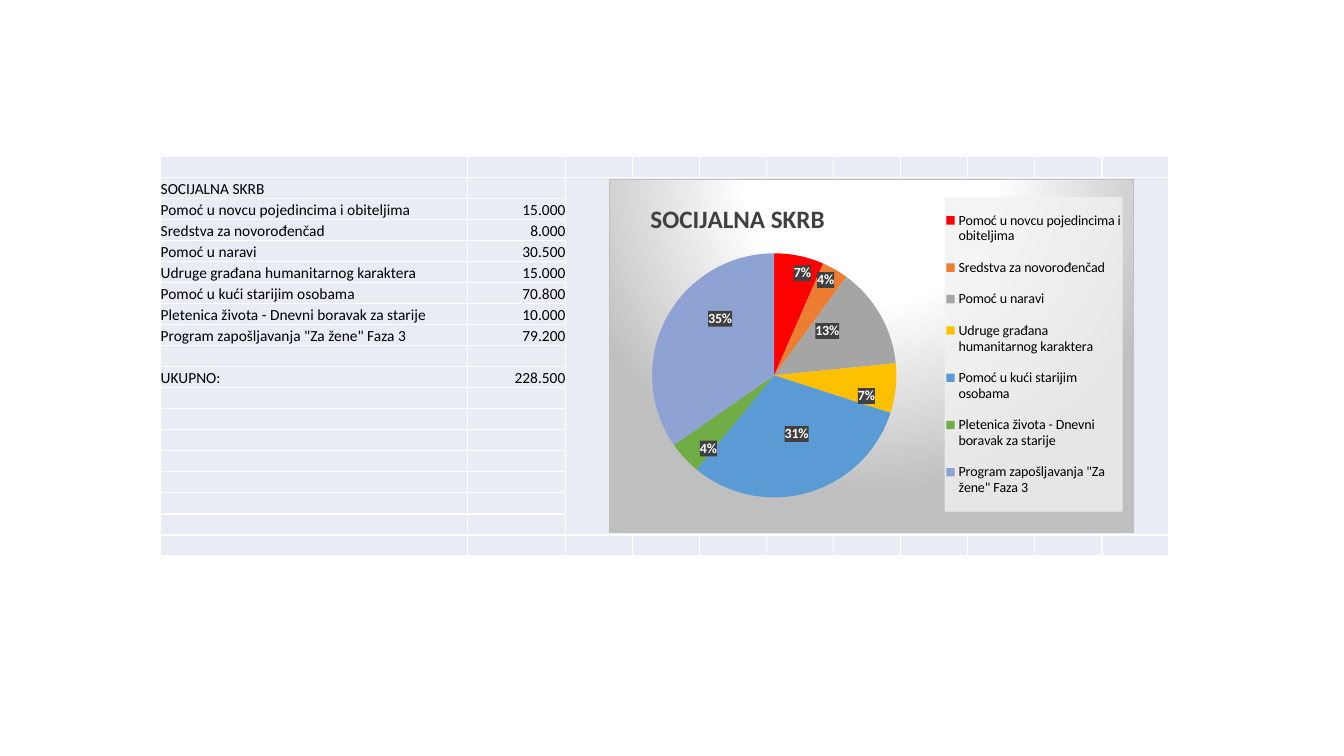
"""Build the social care budget slide with its table and pie chart."""
from copy import deepcopy

from lxml import etree
from pptx import Presentation
from pptx.chart.data import CategoryChartData
from pptx.dml.color import RGBColor
from pptx.enum.chart import XL_CHART_TYPE, XL_LABEL_POSITION, XL_LEGEND_POSITION
from pptx.enum.text import MSO_ANCHOR, PP_ALIGN
from pptx.oxml import parse_xml
from pptx.oxml.ns import nsdecls, qn
from pptx.util import Cm, Pt

PIE = XL_CHART_TYPE.PIE
CENTER = XL_LABEL_POSITION.CENTER
LEGEND_RIGHT = XL_LEGEND_POSITION.RIGHT
BOTTOM = MSO_ANCHOR.BOTTOM
RIGHT = PP_ALIGN.RIGHT

FONT = "Calibri"
CELL_FILL = "E9EBF5"
HEADING = "SOCIJALNA SKRB"
TOTAL_LABEL = "UKUPNO:"

# name, amount, slice colour, label shift as fractions of the chart
EXPENSES = [
    ("Pomoć u novcu pojedincima i obiteljima", 15000, "FF0000", (0.03, -0.12)),
    ("Sredstva za novorođenčad", 8000, "ED7D31", (0.04, -0.12)),
    ("Pomoć u naravi", 30500, "A5A5A5", (0, -0.04)),
    ("Udruge građana humanitarnog karaktera", 15000, "FFC000", (0.06, 0.04)),
    ("Pomoć u kući starijim osobama", 70800, "5B9BD5", (0.01, 0)),
    ("Pletenica života - Dnevni boravak za starije", 10000, "70AD47", (-0.04, 0.09)),
    ('Program zapošljavanja "Za žene" Faza 3', 79200, "8FA2D4", (0, -0.08)),
]

ROW_COUNT = 19
ROW_HEIGHT = 0.53
COLUMN_WIDTHS = [7.73, 2.47] + [1.69] * 9
TABLE_LEFT, TABLE_TOP = 4.05, 3.94
CHART_BOX = (15.34, 4.5, 13.23, 8.94)


def rgb(color):
    return RGBColor.from_string(color)


def style_font(font, size, color, bold=False):
    font.name, font.size, font.bold = FONT, Pt(size), bold
    font.color.rgb = rgb(color)


def amount_text(amount):
    return f"{amount:,}".replace(",", ".")


def add_budget_table(slide):
    total = sum(amount for _, amount, _, _ in EXPENSES)
    entries = {1: (HEADING, "")}
    for row, (name, amount, _, _) in enumerate(EXPENSES, start=2):
        entries[row] = (name, amount_text(amount))
    entries[len(EXPENSES) + 3] = (TOTAL_LABEL, amount_text(total))

    table = slide.shapes.add_table(
        ROW_COUNT, len(COLUMN_WIDTHS), Cm(TABLE_LEFT), Cm(TABLE_TOP),
        Cm(sum(COLUMN_WIDTHS)), Cm(ROW_HEIGHT * ROW_COUNT)).table
    table.first_row = table.horz_banding = False
    for column, width in zip(table.columns, COLUMN_WIDTHS):
        column.width = Cm(width)
    for row_index, row in enumerate(table.rows):
        row.height = Cm(ROW_HEIGHT)
        texts = entries.get(row_index, ())
        for column_index, cell in enumerate(row.cells):
            cell.fill.solid()
            cell.fill.fore_color.rgb = rgb(CELL_FILL)
            cell.margin_left = cell.margin_right = 0
            cell.margin_top = cell.margin_bottom = 0
            cell.vertical_anchor = BOTTOM
            paragraph = cell.text_frame.paragraphs[0]
            if column_index < len(texts) and texts[column_index]:
                paragraph.text = texts[column_index]
                style_font(paragraph.runs[0].font, 11, "000000")
                if column_index == 1:
                    paragraph.alignment = RIGHT
            else:
                etree.SubElement(paragraph._p, qn("a:endParaRPr"), sz="1100")
    table.cell(1, 2).merge(table.cell(ROW_COUNT - 2, len(COLUMN_WIDTHS) - 1))


def shape_properties(content):
    return parse_xml(f'<c:spPr {nsdecls("c", "a")}>{content}</c:spPr>')


def clear_fill(color, alpha):
    return shape_properties(
        f'<a:solidFill><a:srgbClr val="{color}"><a:alpha val="{alpha * 1000}"/>'
        '</a:srgbClr></a:solidFill>')


def manual_layout(**settings):
    values = "".join(f'<c:{key} val="{value}"/>' for key, value in settings.items())
    return parse_xml(f'<c:layout {nsdecls("c")}><c:manualLayout>{values}'
                     '</c:manualLayout></c:layout>')


def set_layout(element, index, **settings):
    for old in element.findall(qn("c:layout")):
        element.remove(old)
    element.insert(index, manual_layout(xMode="edge", yMode="edge", **settings))


def add_percent_labels(series):
    labels = series.data_labels
    labels.show_percentage, labels.show_value = True, False
    labels.number_format, labels.number_format_is_linked = "0%", False
    labels.position = CENTER
    style_font(labels.font, 10, "FFFFFF", bold=True)
    group = labels._element
    group.find(qn("c:txPr")).addprevious(clear_fill("404040", 90))
    leader_lines = group.find(qn("c:showLeaderLines"))
    if leader_lines is not None:
        leader_lines.set("val", "0")
    shared = [part for part in group if part is not leader_lines]
    for index, (_, _, _, (shift_x, shift_y)) in enumerate(EXPENSES):
        label = parse_xml(f'<c:dLbl {nsdecls("c")}><c:idx val="{index}"/></c:dLbl>')
        label.append(manual_layout(x=shift_x, y=shift_y))
        label.extend(deepcopy(part) for part in shared)
        group.insert(index, label)


def add_budget_pie(slide):
    budget = CategoryChartData(number_format="#,##0")
    budget.categories = [name for name, _, _, _ in EXPENSES]
    budget.add_series(HEADING, [amount for _, amount, _, _ in EXPENSES])
    chart = slide.shapes.add_chart(PIE, *map(Cm, CHART_BOX), budget).chart
    style_font(chart.font, 10, "000000")

    stops = "".join(f'<a:gs pos="{position}000"><a:srgbClr val="{color}"/></a:gs>'
                    for position, color in [(0, "FFFFFF"), (39, "FFFFFF"), (100, "BFBFBF")])
    background = shape_properties(
        f'<a:gradFill><a:gsLst>{stops}</a:gsLst><a:path path="circle">'
        '<a:fillToRect l="50000" t="-80000" r="50000" b="180000"/></a:path></a:gradFill>'
        '<a:ln w="9525"><a:solidFill><a:srgbClr val="BFBFBF"/></a:solidFill></a:ln>')
    chart._chartSpace.find(qn("c:txPr")).addprevious(background)

    chart.has_title = True
    title = chart.chart_title
    title.text_frame.text = HEADING
    style_font(title.text_frame.paragraphs[0].runs[0].font, 18, "404040", bold=True)
    set_layout(title._element, 1, x=0.07, y=0.05)

    chart.has_legend = True
    legend = chart.legend
    legend.position = LEGEND_RIGHT
    legend.include_in_layout = False
    style_font(legend.font, 10, "000000")
    legend._element.find(qn("c:txPr")).addprevious(clear_fill("F2F2F2", 78))
    set_layout(legend._element, 1, x=0.64, y=0.05, w=0.34, h=0.89)

    plot = chart.plots[0]
    plot.vary_by_categories = True
    set_layout(plot._element.getparent(), 0, x=0.07, y=0.21, w=0.49, h=0.69)
    plot._element.getparent().find(
        f'{qn("c:layout")}/{qn("c:manualLayout")}').insert(
        0, parse_xml(f'<c:layoutTarget {nsdecls("c")} val="inner"/>'))
    expenses = plot.series[0]
    for index, (_, _, color, _) in enumerate(EXPENSES):
        slice_fill = expenses.points[index].format.fill
        slice_fill.solid()
        slice_fill.fore_color.rgb = rgb(color)
    add_percent_labels(expenses)


def main():
    presentation = Presentation()
    presentation.slide_width, presentation.slide_height = Cm(33.87), Cm(19.05)
    slide = presentation.slides.add_slide(presentation.slide_layouts[6])
    add_budget_table(slide)
    add_budget_pie(slide)
    presentation.save("out.pptx")


if __name__ == "__main__":
    main()
